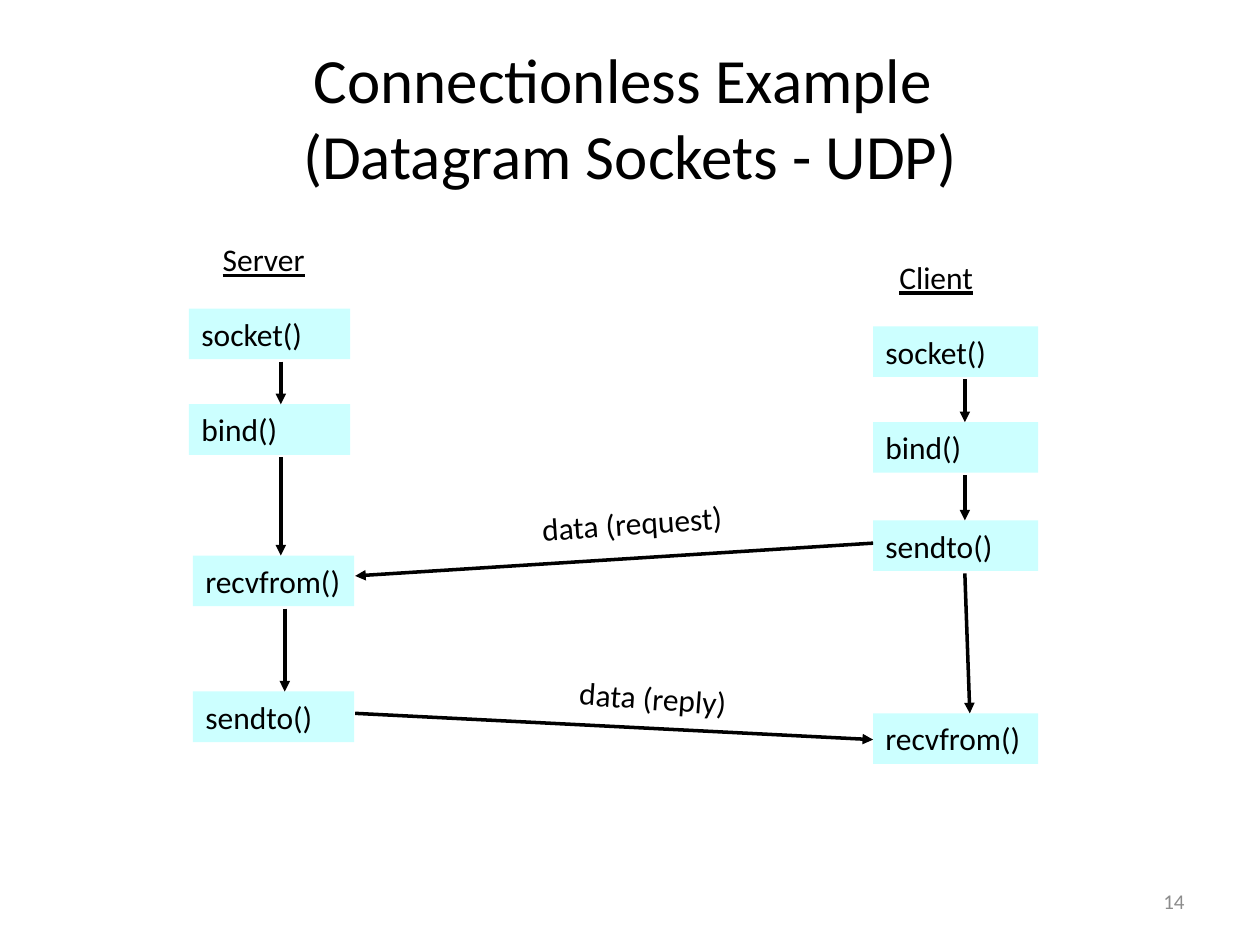
from dataclasses import dataclass
from itertools import pairwise

from lxml.etree import SubElement
from pptx import Presentation
from pptx.dml.color import RGBColor
from pptx.enum.shapes import MSO_CONNECTOR as Connector, MSO_SHAPE as Shape
from pptx.enum.text import MSO_ANCHOR as Anchor, PP_ALIGN as Align
from pptx.oxml.ns import qn
from pptx.util import Cm, Pt


@dataclass(frozen=True)
class Theme:
    font: str = "Calibri"
    ink: RGBColor = RGBColor(0, 0, 0)
    muted: RGBColor = RGBColor(0x8C, 0x8C, 0x8C)
    call_fill: RGBColor = RGBColor(0xCC, 0xFF, 0xFF)
    title_size: int = 36
    body_size: int = 18
    number_size: int = 12
    line_width: int = 2


@dataclass(frozen=True)
class Box:
    left: float
    top: float
    width: float
    height: float

    def inner(self, left, top, width, height):
        return Box(self.left + left, self.top + top, width, height)

    def lengths(self):
        return [Cm(v) for v in (self.left, self.top, self.width, self.height)]


THEME = Theme()
CALL_HEIGHT = 1.02
STEM = 1.85  # distance from a call's left edge to its arrow
GAP = 0.05  # space between a call and the arrow leaving it


def add_run(paragraph, text, size=THEME.body_size, color=THEME.ink, underline=None):
    run = paragraph.add_run()
    run.text = text
    run.font.name = THEME.font
    run.font.size = Pt(size)
    run.font.color.rgb = color
    run.font.underline = underline


def add_label(slide, box, text, align=Align.LEFT, anchor=Anchor.TOP, rotation=0, **style):
    label = slide.shapes.add_textbox(*box.lengths())
    label.rotation = rotation
    frame = label.text_frame
    frame.word_wrap = True
    frame.vertical_anchor = anchor
    paragraph = frame.paragraphs[0]
    paragraph.alignment = align
    add_run(paragraph, text, **style)


def add_call(slide, box, name):
    shape = slide.shapes.add_shape(Shape.RECTANGLE, *box.lengths())
    shape.shadow.inherit = False
    shape.fill.solid()
    shape.fill.fore_color.rgb = THEME.call_fill
    shape.line.fill.background()
    frame = shape.text_frame
    frame.word_wrap = True
    frame.vertical_anchor = Anchor.TOP
    paragraph = frame.paragraphs[0]
    paragraph.alignment = Align.LEFT
    add_run(paragraph, name)


def add_arrow(slide, start, end):
    arrow = slide.shapes.add_connector(
        Connector.STRAIGHT, *(Cm(v) for v in (*start, *end)))
    arrow.line.color.rgb = THEME.ink
    arrow.line.width = Pt(THEME.line_width)
    properties = arrow.line._get_or_add_ln()
    SubElement(properties, qn("a:tailEnd"), type="triangle")
    SubElement(properties.getparent(), qn("a:effectLst"))


def add_title(slide, box, lines):
    title = slide.shapes.title
    title.left, title.top, title.width, title.height = box.lengths()
    title.text_frame.vertical_anchor = Anchor.MIDDLE
    paragraph = title.text_frame.paragraphs[0]
    paragraph.alignment = Align.CENTER
    for index, line in enumerate(lines):
        if index:
            paragraph.add_line_break()
        add_run(paragraph, line, size=THEME.title_size)


def add_lane(slide, box, heading, heading_indent, steps, last_lean=0):
    """Steps are (call, indent, top); last_lean tilts the final arrow."""
    add_label(slide, box.inner(heading_indent, 0, 3.05, 1.09), heading, underline=True)
    calls = []
    for name, indent, top in steps:
        call = box.inner(indent, top, box.width, CALL_HEIGHT)
        add_call(slide, call, name)
        calls.append(call)
    # Each arrow drops straight from one call to the next
    for index, (upper, lower) in enumerate(pairwise(calls), start=2):
        stem = upper.left + STEM
        lean = last_lean if index == len(calls) else 0
        add_arrow(slide, (stem, upper.top + CALL_HEIGHT + GAP), (stem + lean, lower.top))


def add_messages(slide, box):
    right = box.left + box.width
    # Request, client to server
    add_arrow(slide, (right, box.top + 0.92), (box.left, box.top + 1.58))
    add_label(slide, box.inner(3.51, 0, 4.22, CALL_HEIGHT), "data (request)", rotation=356)
    # Reply, server to client
    add_arrow(slide, (box.left, box.top + 4.35), (right, box.top + 4.88))
    add_label(slide, box.inner(4.27, 3.53, 3.53, CALL_HEIGHT), "data (reply)", rotation=4.1)


def main():
    presentation = Presentation()
    presentation.slide_width, presentation.slide_height = Cm(25.4), Cm(19.05)
    slide = presentation.slides.add_slide(presentation.slide_layouts[5])

    add_title(slide, Box(1.27, 0.76, 22.86, 3.18),
              ["Connectionless Example ", "(Datagram Sockets - UDP)"])
    add_lane(slide, Box(3.81, 4.72, 3.25, 10.24), "Server", 0.43,
             [("socket()", 0, 1.5), ("bind()", 0, 3.43),
              ("recvfrom()", 0.08, 6.48), ("sendto()", 0.08, 9.22)])
    add_lane(slide, Box(17.6, 5.08, 3.33, 10.32), "Client", 0.28,
             [("socket()", 0, 1.5), ("bind()", 0, 3.43),
              ("sendto()", 0, 5.41), ("recvfrom()", 0, 9.3)], last_lean=0.1)
    add_messages(slide, Box(7.16, 10.03, 10.44, 4.88))

    # Slide number
    add_label(slide, Box(18.21, 17.65, 5.92, 1.02), "14", Align.RIGHT, Anchor.MIDDLE,
              size=THEME.number_size, color=THEME.muted)
    presentation.save("out.pptx")


if __name__ == "__main__":
    main()
